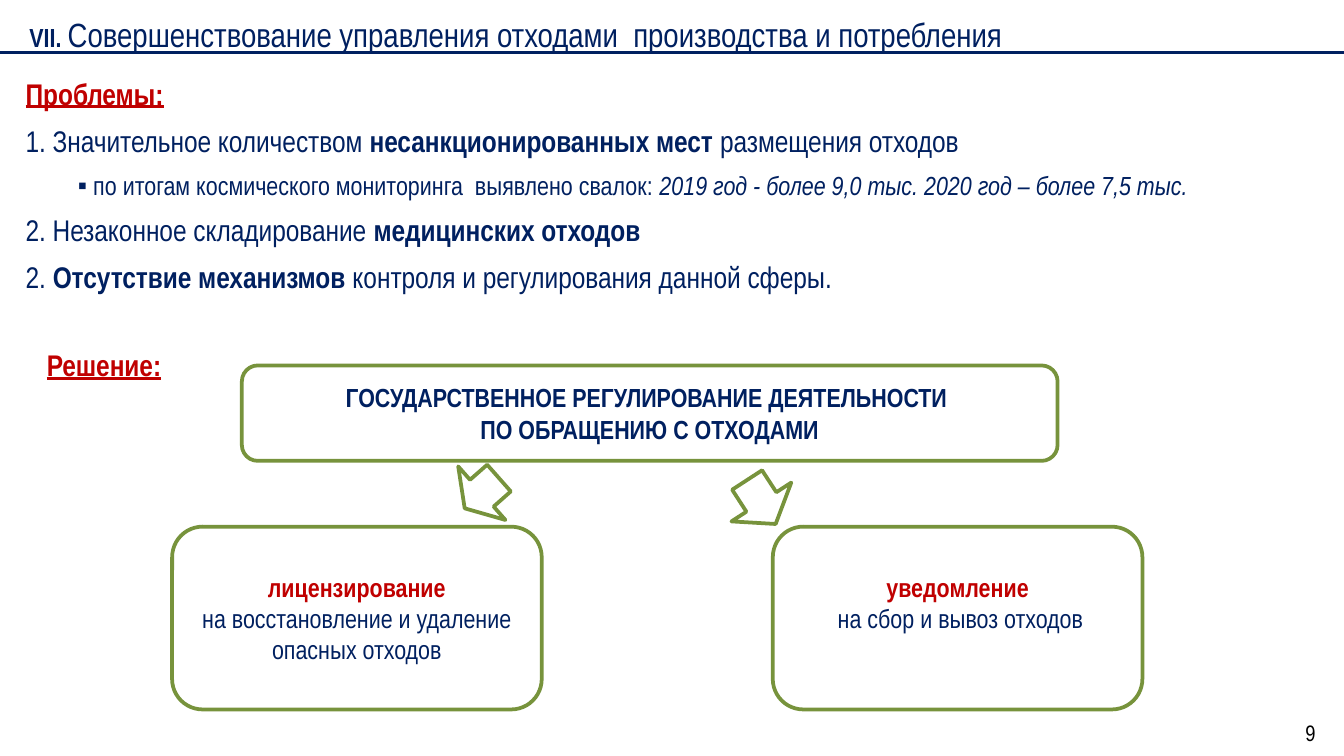
from pptx import Presentation
from pptx import util as u
from pptx.dml.color import RGBColor
from pptx.enum import shapes, text
from pptx.oxml.ns import qn
from lxml import etree

COLORS = {"navy": "002060", "red": "C00000", "green": "77933C",
          "white": "FFFFFF", "black": "000000"}
ALIGN = text.PP_ALIGN


def add_run(paragraph, words, size=14, color="navy", bold=False,
            italic=False, underline=False, face="Arial Narrow"):
    run = paragraph.add_run()
    run.text = words
    font = run.font
    font.name, font.size = face, u.Pt(size)
    font.bold, font.italic, font.underline = bold, italic, underline
    font.color.rgb = RGBColor.from_string(COLORS[color])


class SlideBuilder:
    def __init__(self, slide, outline="green", outline_width=2):
        self.slide = slide
        self.outline = outline
        self.outline_width = outline_width

    def fill_text(self, frame, paragraphs, align, after=0, anchor=text.MSO_ANCHOR.TOP):
        frame.auto_size = text.MSO_AUTO_SIZE.NONE
        frame.vertical_anchor = anchor
        for index, runs in enumerate(paragraphs):
            paragraph = frame.add_paragraph() if index else frame.paragraphs[0]
            paragraph.alignment = align
            paragraph.space_before, paragraph.space_after = u.Pt(0), u.Pt(after)
            for words, style in runs:
                add_run(paragraph, words, **style)

    def placeholder(self, holder, box, paragraphs, align, after=0):
        holder.left, holder.top, holder.width, holder.height = map(u.Pt, box)
        self.fill_text(holder.text_frame, paragraphs, align, after)
        return holder.text_frame

    def label(self, box, runs, align, wrap=True):
        frame = self.slide.shapes.add_textbox(*map(u.Pt, box)).text_frame
        frame.word_wrap = wrap
        self.fill_text(frame, [runs], align)

    def outlined(self, preset, box, fill=None):
        shape = self.slide.shapes.add_shape(preset, *map(u.Pt, box))
        shape.shadow.inherit = False
        if fill:
            shape.fill.solid()
            shape.fill.fore_color.rgb = RGBColor.from_string(COLORS[fill])
        else:
            shape.fill.background()
        shape.line.color.rgb = RGBColor.from_string(COLORS[self.outline])
        shape.line.width = u.Pt(self.outline_width)
        return shape

    def card(self, box, paragraphs, fill=None, bottom=3.6):
        frame = self.outlined(shapes.MSO_SHAPE.ROUNDED_RECTANGLE, box, fill).text_frame
        frame.margin_bottom = u.Pt(bottom)
        frame.word_wrap = True
        self.fill_text(frame, paragraphs, ALIGN.CENTER, anchor=text.MSO_ANCHOR.MIDDLE)

    def arrow(self, box, rotation):
        self.outlined(shapes.MSO_SHAPE.DOWN_ARROW, box).rotation = rotation

    def rule(self, y, width):
        line = self.slide.shapes.add_connector(
            shapes.MSO_CONNECTOR.STRAIGHT, u.Pt(0), u.Pt(y), u.Pt(width), u.Pt(y))
        line.line.color.rgb = RGBColor.from_string(COLORS["navy"])
        line.line.width = u.Pt(1.5)
        etree.SubElement(line._element.spPr, qn("a:effectLst"))


def set_bullet(paragraph, char=None, margin=0, indent=0):
    props = paragraph._p.get_or_add_pPr()
    props.set("marL", str(u.Pt(margin)))
    props.set("indent", str(u.Pt(indent)))
    if char:
        etree.SubElement(props, qn("a:buChar")).set("char", char)
    else:
        etree.SubElement(props, qn("a:buNone"))


def main():
    deck = Presentation()
    deck.slide_width, deck.slide_height = u.Pt(720), u.Pt(405)
    slide = deck.slides.add_slide(deck.slide_layouts[1])
    builder = SlideBuilder(slide)

    heading = dict(size=16, color="red", bold=True, underline=True)
    plain, strong = dict(size=16), dict(size=16, bold=True)
    problems = [
        [("Проблемы:", heading)],
        [("1. Значительное количеством ", plain),
         ("несанкционированных мест ", strong), ("размещения отходов", plain)],
        [(" по итогам космического мониторинга  выявлено свалок: ", {}),
         ("2019 год - более 9,0 тыс. 2020 год – более 7,5 тыс.", dict(italic=True))],
        [("2. Незаконное складирование ", plain), ("медицинских отходов", strong)],
        [("2. ", plain), ("Отсутствие механизмов", strong),
         (" контроля и регулирования данной сферы.", plain)],
    ]
    problem_frame = builder.placeholder(
        slide.placeholders[1], (6.5, 36.7, 693.4, 126), problems, ALIGN.JUSTIFY, after=6)
    for index, problem in enumerate(problem_frame.paragraphs):
        if index == 2:
            set_bullet(problem, "▪", 22.3, 5.8)
        else:
            set_bullet(problem)

    builder.placeholder(
        slide.shapes.title, (8.6, 3.6, 675.4, 28.8),
        [[("VII. ", dict(bold=True)),
          ("Совершенствование управления отходами  производства и потребления",
           dict(size=18))]], ALIGN.LEFT)
    builder.rule(28, 720)
    builder.label((684, 381.6, 36, 21.6), [("9", dict(size=12, color="black"))], ALIGN.CENTER)
    builder.label((18, 182.2, 77, 26.6), [("Решение:", heading)], ALIGN.LEFT, wrap=False)

    builder.card((129.6, 195.8, 437, 51.1), [
        [("ГОСУДАРСТВЕННОЕ РЕГУЛИРОВАНИЕ ДЕЯТЕЛЬНОСТИ ", dict(bold=True))],
        [("ПО ОБРАЩЕНИЮ С ОТХОДАМИ", dict(bold=True))]])
    measures = [
        (92.2, "лицензирование", "на восстановление и удаление опасных отходов", 3.6),
        (414, "уведомление", " на сбор и вывоз отходов", 20),
    ]
    for left, measure, scope, bottom in measures:
        builder.card((left, 282.2, 198, 97.9),
                     [[(measure, dict(color="red", bold=True))], [(scope, {})]],
                     fill="white", bottom=bottom)
    builder.arrow((239, 252, 38.2, 24.5), 48.6)
    builder.arrow((388.8, 254.9, 38.2, 28.1), 327)
    deck.save("out.pptx")


if __name__ == "__main__":
    main()
